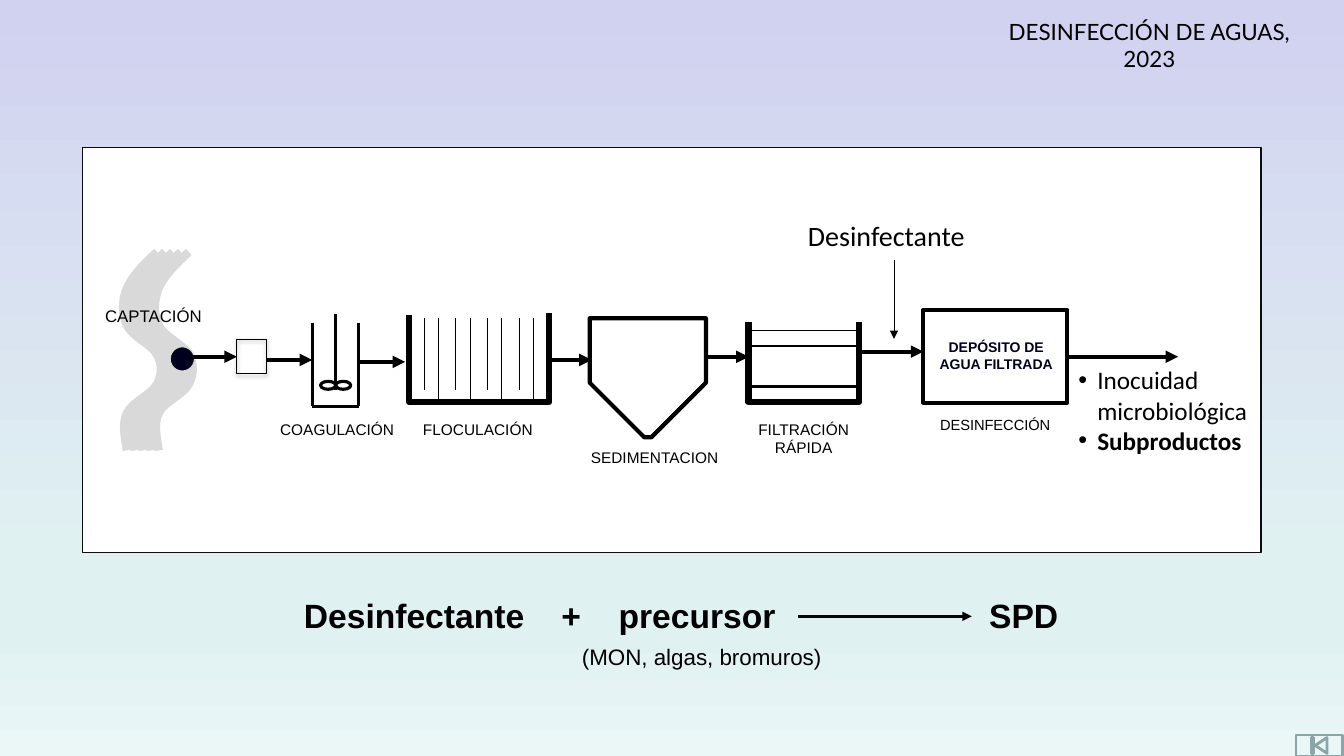
from lxml import etree
from pptx import Presentation
from pptx.dml.color import RGBColor
from pptx.enum.shapes import MSO_CONNECTOR, MSO_SHAPE
from pptx.enum.text import MSO_ANCHOR, MSO_AUTO_SIZE, PP_ALIGN
from pptx.oxml.ns import qn
from pptx.util import Cm, Pt

STRAIGHT = MSO_CONNECTOR.STRAIGHT
RECTANGLE = MSO_SHAPE.RECTANGLE
OVAL = MSO_SHAPE.OVAL
HOPPER = MSO_SHAPE.SNIP_2_SAME_RECTANGLE
BUTTON = MSO_SHAPE.ACTION_BUTTON_BEGINNING
LEFT, CENTER = PP_ALIGN.LEFT, PP_ALIGN.CENTER

COLORS = {
    "black": "000000", "white": "FFFFFF", "panel_line": "0D0D0D",
    "navy": "00001C", "river": "D9D9D9", "button": "8AA6A8",
}
BACKGROUND_STOPS = [(0, "D1D1F0"), (74, "E0F1F2"), (83, "E0F1F2"), (100, "EBF6F7")]

# Start point, then two control points and an end point for each bend.
RIVER_COURSE = [
    (3.96, 6.35),
    (3.63, 6.65), (3.33, 6.96), (3.2, 7.26),
    (3.07, 7.57), (3.07, 7.92), (3.2, 8.2),
    (3.33, 8.48), (3.84, 8.69), (3.96, 8.94),
    (4.09, 9.17), (4.09, 9.42), (3.96, 9.68),
    (3.84, 9.93), (3.33, 10.13), (3.2, 10.41),
    (3.07, 10.69), (3.15, 11.02), (3.2, 11.35),
]
# Left, right, height of each arrow between two process units.
FLOW_ARROWS = [
    (4.8, 5.97, 8.99), (6.73, 7.87, 9.07), (9.07, 10.21, 9.12),
    (13.87, 14.91, 9.07), (17.81, 18.87, 8.99), (21.59, 23.27, 8.86),
    (26.87, 29.69, 8.99),
]
# Text, box, size, alignment.
LABELS = [
    ("CAPTACIÓN", (2.4, 7.59, 3.2, 0.76), 12, LEFT),
    ("COAGULACIÓN", (6.81, 10.46, 3.61, 0.74), 11, LEFT),
    ("FLOCULACIÓN", (10.41, 10.46, 3.73, 0.74), 11, LEFT),
    ("SEDIMENTACION", (14.64, 11.17, 4.22, 0.74), 11, LEFT),
    ("FILTRACIÓN RÁPIDA", (18.45, 10.46, 3.61, 1.19), 11, CENTER),
    ("DESINFECCIÓN", (23.44, 10.36, 3.4, 0.71), 10.5, LEFT),
    ("(MON, algas, bromuros)", (14.13, 16.08, 7.11, 0.94), 16, CENTER),
]


def color(name):
    return RGBColor.from_string(COLORS[name])


def paint_background(slide):
    fill = slide.background.fill
    fill.gradient()
    fill.gradient_angle = 270
    stops = slide.background._cSld.find(".//" + qn("a:gsLst"))
    for stop in list(stops):
        stops.remove(stop)
    for position, value in BACKGROUND_STOPS:
        stop = etree.SubElement(stops, qn("a:gs"), pos=str(position * 1000))
        etree.SubElement(stop, qn("a:srgbClr"), val=value)


def style(shape, width, line="black", fill=None):
    shape.shadow.inherit = False
    if fill:
        shape.fill.solid()
        shape.fill.fore_color.rgb = color(fill)
    else:
        shape.fill.background()
    shape.line.color.rgb = color(line)
    shape.line.width = Pt(width)
    return shape


def add_box(slide, kind, box, width, line="black", fill=None):
    shape = slide.shapes.add_shape(kind, *map(Cm, box))
    return style(shape, width, line, fill)


def add_outline(slide, points, width, line="black"):
    """Draw an open, unfilled polyline through points in centimetres."""
    points = [(Cm(x), Cm(y)) for x, y in points]
    builder = slide.shapes.build_freeform(*points[0])
    builder.add_line_segments(points[1:], close=False)
    return style(builder.convert_to_shape(), width, line)


def curve(outline):
    """Turn every three line segments of an outline into one cubic Bézier curve."""
    track = outline._element.find(".//" + qn("a:path"))
    segments = track.findall(qn("a:lnTo"))
    for first in range(0, len(segments), 3):
        bend = etree.SubElement(track, qn("a:cubicBezTo"))
        for segment in segments[first:first + 3]:
            bend.append(segment[0])
            track.remove(segment)


def add_line(slide, start, end, width, arrow=False):
    connector = slide.shapes.add_connector(STRAIGHT, *map(Cm, start + end))
    connector.line.color.rgb = color("black")
    connector.line.width = Pt(width)
    properties = connector._element.spPr
    if arrow:
        etree.SubElement(properties.find(qn("a:ln")), qn("a:tailEnd"), type="triangle")
    etree.SubElement(properties, qn("a:effectLst"))


def place(shape, box):
    shape.left, shape.top, shape.width, shape.height = map(Cm, box)
    frame = shape.text_frame
    frame.word_wrap = True
    frame.auto_size = MSO_AUTO_SIZE.NONE
    frame.vertical_anchor = MSO_ANCHOR.TOP
    return frame


def write(paragraph, text, size, font="Arial", align=LEFT, bold=False, ink="black"):
    paragraph.alignment = align
    run = paragraph.add_run()
    run.text = text
    run.font.size = Pt(size)
    run.font.name = font
    run.font.bold = bold
    run.font.color.rgb = color(ink)


def add_text(slide, text, box, size, align=LEFT, **look):
    frame = place(slide.shapes.add_textbox(*map(Cm, box)), box)
    write(frame.paragraphs[0], text, size, align=align, **look)
    return frame.paragraphs[0]


def set_tabs(paragraph, positions):
    tabs = etree.SubElement(paragraph._p.get_or_add_pPr(), qn("a:tabLst"))
    for position in positions:
        etree.SubElement(tabs, qn("a:tab"), pos=str(Cm(position)), algn="l")


def fill_outcomes(placeholder):
    frame = place(placeholder, (26.92, 9.06, 5.56, 2.57))
    outcomes = [("Inocuidad microbiológica", False), ("Subproductos", True)]
    for index, (text, bold) in enumerate(outcomes):
        paragraph = frame.add_paragraph() if index else frame.paragraphs[0]
        write(paragraph, text, 18, "Calibri", bold=bold)
        paragraph.space_before = Pt(0)
        properties = paragraph._p.get_or_add_pPr()
        properties.set("marL", str(Cm(0.48)))
        properties.set("indent", str(Cm(-0.48)))
        etree.SubElement(properties, qn("a:buFont"), typeface="Arial")
        etree.SubElement(properties, qn("a:buChar"), char="•")


def draw_intake(slide):
    for strand in range(5):
        course = [(x + 0.2 * strand, y) for x, y in RIVER_COURSE]
        curve(add_outline(slide, course, 6, "river"))
    add_box(slide, OVAL, (4.29, 8.74, 0.61, 0.61), 0.75, "river", "navy")
    pump = add_box(slide, RECTANGLE, (5.97, 8.55, 0.74, 0.86), 0.75)
    effects = pump._element.spPr.find(qn("a:effectLst"))
    shadow = etree.SubElement(effects, qn("a:outerShdw"), blurRad=str(Pt(3.1)),
                              dist=str(Pt(1.6)), dir="5400000", rotWithShape="0")
    shade = etree.SubElement(shadow, qn("a:srgbClr"), val=COLORS["black"])
    etree.SubElement(shade, qn("a:alpha"), val="38000")


def draw_mixer(slide):
    left, right, top, bottom = 7.87, 9.04, 8.13, 10.24
    add_line(slide, (left, bottom), (right, bottom), 2.25)
    for wall in (left, right):
        add_line(slide, (wall, top), (wall, bottom), 2.25)
    for blade in (8.08, 8.46):
        add_box(slide, OVAL, (blade, 9.61, 0.38, 0.2), 2.25)
    add_line(slide, (8.46, 9.83), (8.46, 7.92), 2.25)


def draw_flocculator(slide):
    add_outline(slide, [(10.31, 7.95), (10.31, 10.13), (13.84, 10.13), (13.84, 7.9)], 4.5)
    for pair in range(4):
        for first, bottom in ((10.69, 9.83), (11.05, 10.13)):
            x = first + 0.8 * pair
            add_line(slide, (x, 8.02), (x, bottom), 0.75)


def draw_settler(slide):
    settler = add_box(slide, HOPPER, (14.86, 8.02, 2.93, 3), 3)
    settler.rotation = 180
    settler.adjustments[0] = 0.47
    settler.adjustments[1] = 0


def draw_filter(slide):
    for top, height, width in ((8.33, 1.4, 1), (9.73, 0.41, 2.25), (8.72, 0.99, 0.75)):
        add_box(slide, RECTANGLE, (18.86, top, 2.79, height), width)
    add_outline(slide, [(18.86, 8.12), (18.86, 10.13), (21.65, 10.13), (21.65, 8.12)], 4.5)


def draw_reservoir(slide):
    add_box(slide, RECTANGLE, (23.27, 7.81, 3.63, 2.34), 3)
    add_text(slide, "DEPÓSITO DE AGUA FILTRADA", (23.29, 8.41, 3.63, 1.12), 10,
             CENTER, bold=True, ink="navy")
    add_text(slide, "Desinfectante", (20.11, 5.38, 4.85, 1.12), 20, font="Calibri")
    add_line(slide, (22.53, 6.55), (22.53, 8.54), 0.75, arrow=True)


def draw_reaction(slide):
    equation = add_text(slide, "Desinfectante\t+\tprecursor\tSPD",
                        (7.41, 14.86, 22.28, 1.27), 24, bold=True)
    set_tabs(equation, (6.49, 7.93, 17.27))
    add_line(slide, (20.12, 15.53), (24.49, 15.53), 2.25, arrow=True)


def main():
    presentation = Presentation()
    presentation.slide_width, presentation.slide_height = Cm(33.87), Cm(19.05)
    slide = presentation.slides.add_slide(presentation.slide_layouts[1])
    paint_background(slide)
    panel = add_box(slide, RECTANGLE, (2.08, 3.72, 29.7, 10.21), 0.75, "panel_line", "white")
    slide.shapes._spTree.insert(2, panel._element)  # behind the list
    title = place(slide.shapes.title, (24.94, 0.33, 8.05, 0.94))
    write(title.paragraphs[0], "DESINFECCIÓN DE AGUAS, 2023", 16, "Lato", CENTER)
    fill_outcomes(slide.placeholders[1])
    add_box(slide, BUTTON, (32.66, 18.52, 1.17, 0.53), 2, "button")
    for draw in (draw_intake, draw_mixer, draw_flocculator, draw_settler,
                 draw_filter, draw_reservoir, draw_reaction):
        draw(slide)
    for left, right, y in FLOW_ARROWS:
        add_line(slide, (left, y), (right, y), 3, arrow=True)
    for text, box, size, align in LABELS:
        add_text(slide, text, box, size, align)
    presentation.save("out.pptx")


if __name__ == "__main__":
    main()
